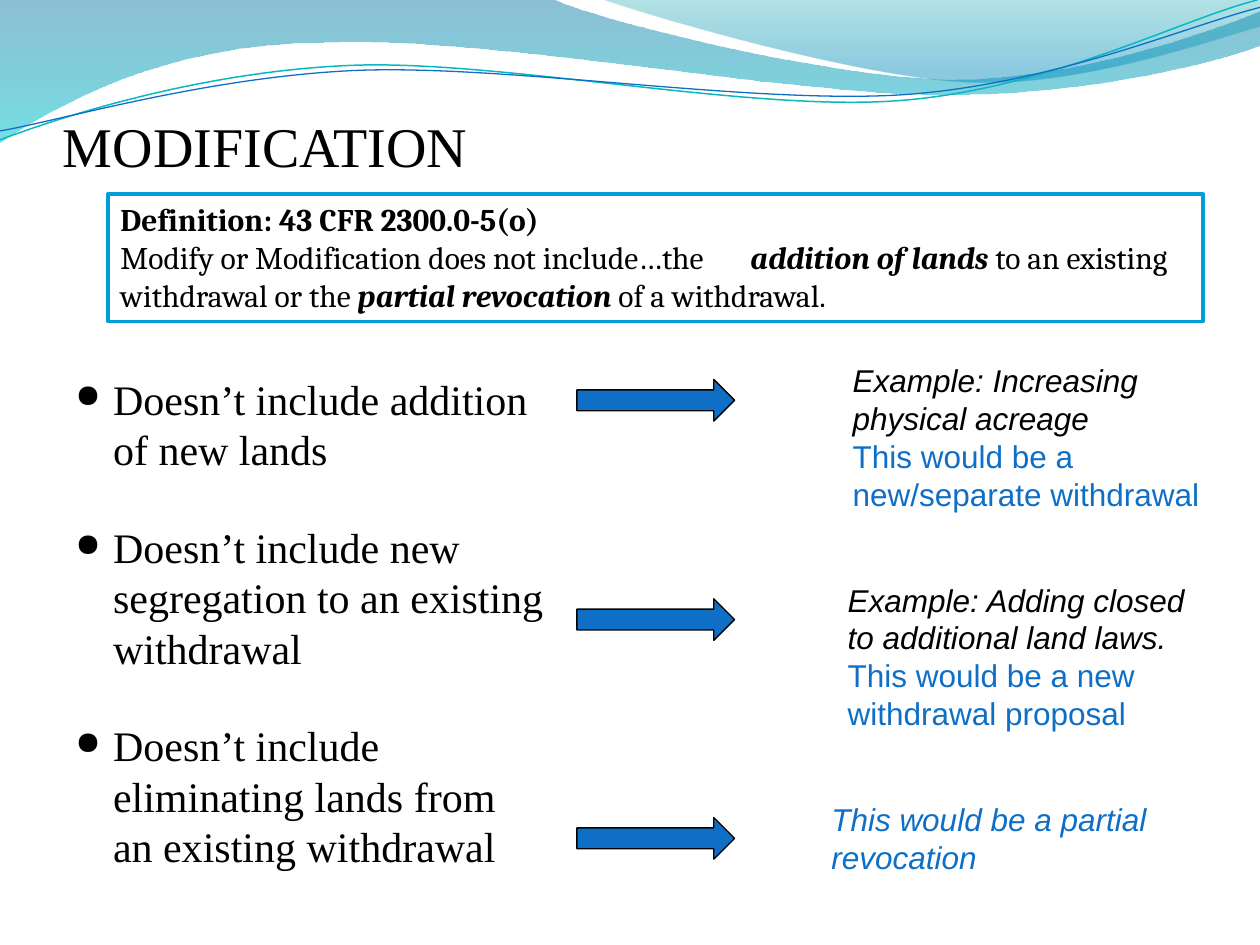
from dataclasses import dataclass

from lxml.etree import SubElement
from pptx import Presentation
from pptx.dml.color import RGBColor
from pptx.enum.shapes import MSO_SHAPE
from pptx.enum.text import MSO_ANCHOR, PP_ALIGN
from pptx.oxml.ns import qn
from pptx.util import Cm, Pt


@dataclass(frozen=True)
class Theme:
    black: RGBColor = RGBColor(0, 0, 0)
    white: RGBColor = RGBColor(255, 255, 255)
    blue: RGBColor = RGBColor.from_string("0F6FC6")
    teal: RGBColor = RGBColor.from_string("0AB8BF")
    frame: RGBColor = RGBColor.from_string("009DD9")
    serif: str = "Times New Roman"
    sans: str = "Arial"
    quote: str = "Cambria"
    title: Pt = Pt(32)
    body: Pt = Pt(24)
    note: Pt = Pt(18)


theme = Theme()
deck = Presentation()
deck.slide_width, deck.slide_height = Cm(25.4), Cm(19.05)
slide = deck.slides.add_slide(deck.slide_layouts[6])
shapes = slide.shapes


def trace(start, parts, close):
    """Draw an outline; a part is one line end, or three points of a Bezier curve."""
    points = [(round(x * 100), round(y * 100)) for part in parts for x, y in part]
    pen = shapes.build_freeform(round(start[0] * 100), round(start[1] * 100), scale=Cm(0.01))
    pen.add_line_segments(points, close=close)
    shape = pen.convert_to_shape()
    shape.shadow.inherit = False
    lines = iter(list(shape._element.iter(qn("a:lnTo"))))
    for part in parts:
        first, *rest = [next(lines) for point in part]
        if rest:
            first.tag = qn("a:cubicBezTo")
            for line in rest:
                first.append(line[0])
                line.getparent().remove(line)
    return shape


def style(run, face, size, color, bold=False, italic=False):
    font = run.font
    font.name, font.size, font.color.rgb = face, size, color
    font.bold, font.italic = bold, italic


# Waves: start, parts, gradient stops as (position, colour, opacity in percent)
waves = [
    ((0, 0), [
        [(11.18, 0)],
        [(12.09, 0.43), (16.87, 1.6), (19.25, 1.6)],
        [(21.67, 1.6), (24.33, 0.66), (25.4, 0.23)],
        [(25.4, 0.91)],
        [(24.97, 1.12), (22.1, 1.93), (18.95, 1.91)],
        [(15.8, 1.91), (9.7, 0.71), (6.53, 0.86)],
        [(3.28, 0.89), (1.17, 2.11), (0, 2.87)],
    ], [(0, "0074A1", 45), (1, "00C6CF", 55)]),
    ((12.17, 0), [
        [(12.93, 0.28), (17.32, 1.57), (19.53, 1.65)],
        [(21.74, 1.75), (24.41, 0.81), (25.4, 0.53)],
        [(25.4, 0)],
    ], [(0, "00A1A9", 30), (0.8, "008BBF", 45)]),
]
for start, parts, stops in waves:
    wave = trace(start, parts, True)
    wave.line.fill.background()
    wave.fill.gradient()
    wave.fill.gradient_angle = 270
    for stop, (place, color, alpha) in zip(wave.fill.gradient_stops, stops):
        stop.position = place
        stop.color.rgb = RGBColor.from_string(color)
    tags = wave.fill._xPr.iter(qn("a:srgbClr"))
    for tag, (place, color, alpha) in zip(tags, stops):
        SubElement(tag, qn("a:alpha"), val=str(alpha * 1000))

strands = [
    ((0, 2.82), [
        [(1.22, 2.36), (4.01, 1.45), (7.04, 1.32)],
        [(10.03, 1.19), (15.06, 2.26), (18.11, 2.03)],
        [(21.16, 1.8), (23.83, 0.38), (25.35, 0)],
    ], theme.teal, 0.85),
    ((0, 2.64), [
        [(1.19, 2.44), (4.17, 1.55), (7.19, 1.42)],
        [(10.24, 1.3), (15.16, 2.11), (18.21, 1.91)],
        [(21.23, 1.7), (23.9, 0.53), (25.4, 0.15)],
    ], theme.blue, 0.75),
]
for start, parts, color, width in strands:
    strand = trace(start, parts, False)
    strand.fill.background()
    strand.line.color.rgb, strand.line.width = color, Pt(width)

# Title
title = shapes.add_textbox(Cm(1.27), Cm(1.96), Cm(22.86), Cm(1.65)).text_frame
title.word_wrap, title.vertical_anchor = True, MSO_ANCHOR.BOTTOM
title.margin_left = title.margin_right = title.margin_bottom = 0
title.text = "MODIFICATION"
style(title.paragraphs[0].runs[0], theme.serif, theme.title, theme.black)

# Bulleted points
points = [
    "Doesn’t include addition of new lands",
    "Doesn’t include new segregation to an existing withdrawal",
    "Doesn’t include eliminating lands from an existing withdrawal",
]
body = shapes.add_textbox(Cm(1.27), Cm(7.4), Cm(9.96), Cm(10.16)).text_frame
body.word_wrap = True
body.text = "\n".join(points)
for index, para in enumerate(body.paragraphs):
    props = para._p.get_or_add_pPr()
    props.set("marL", str(Cm(0.76)))
    props.set("indent", str(-Cm(0.76)))
    tint = SubElement(props, qn("a:buClr"))
    SubElement(tint, qn("a:srgbClr"), val=str(theme.black))
    SubElement(props, qn("a:buSzPct"), val="76000")
    SubElement(props, qn("a:buChar"), char="●")
    if index:
        para.space_before = Pt(27)
    style(para.runs[0], theme.serif, theme.body, theme.black)

# Arrows and the notes they lead to: arrow top, note left, top, height, lines
rows = [
    (7.65, 16.94, 7.16, 3.33, [
        ("Example: Increasing physical acreage", theme.black, True),
        ("This would be a new/separate withdrawal", theme.blue, False)]),
    (12.07, 16.84, 11.58, 4.11, [
        ("Example: Adding closed to additional land laws.", theme.black, True),
        ("This would be a new withdrawal proposal", theme.blue, False)]),
    (16.48, 16.51, 16, 1.8, [
        ("This would be a partial revocation", theme.blue, True)]),
]
for top, left, head, height, lines in rows:
    arrow = shapes.add_shape(MSO_SHAPE.RIGHT_ARROW, Cm(11.63), Cm(top), Cm(3.18), Cm(0.84))
    arrow.shadow.inherit = False
    arrow.fill.solid()
    arrow.fill.fore_color.rgb = theme.blue
    arrow.line.color.rgb, arrow.line.width = theme.black, Pt(0.75)
    note = shapes.add_textbox(Cm(left), Cm(head), Cm(7.62), Cm(height)).text_frame
    note.word_wrap = True
    note.text = "\n".join(line[0] for line in lines)
    for para, (text, color, italic) in zip(note.paragraphs, lines):
        style(para.runs[0], theme.sans, theme.note, color, italic=italic)

# Definition: text, bold, italic
quote = [
    [("Definition: 43 CFR 2300.0-5(o)", True, False)],
    [("Modify or Modification does not include…the ", False, False),
     ("\taddition of lands ", True, True),
     ("to an existing withdrawal or the ", False, False),
     ("partial revocation ", True, True),
     ("of a withdrawal.", False, False)],
]
box = shapes.add_shape(MSO_SHAPE.RECTANGLE, Cm(2.18), Cm(3.91), Cm(22.07), Cm(2.57))
box.shadow.inherit = False
box.fill.solid()
box.fill.fore_color.rgb = theme.white
box.line.color.rgb, box.line.width = theme.frame, Pt(2)
frame = box.text_frame
frame.word_wrap, frame.vertical_anchor = True, MSO_ANCHOR.TOP
frame.add_paragraph()
for para, pieces in zip(frame.paragraphs, quote):
    para.alignment = PP_ALIGN.LEFT
    for text, bold, italic in pieces:
        run = para.add_run()
        run.text = text
        style(run, theme.quote, theme.note, theme.black, bold, italic)

deck.save("out.pptx")
